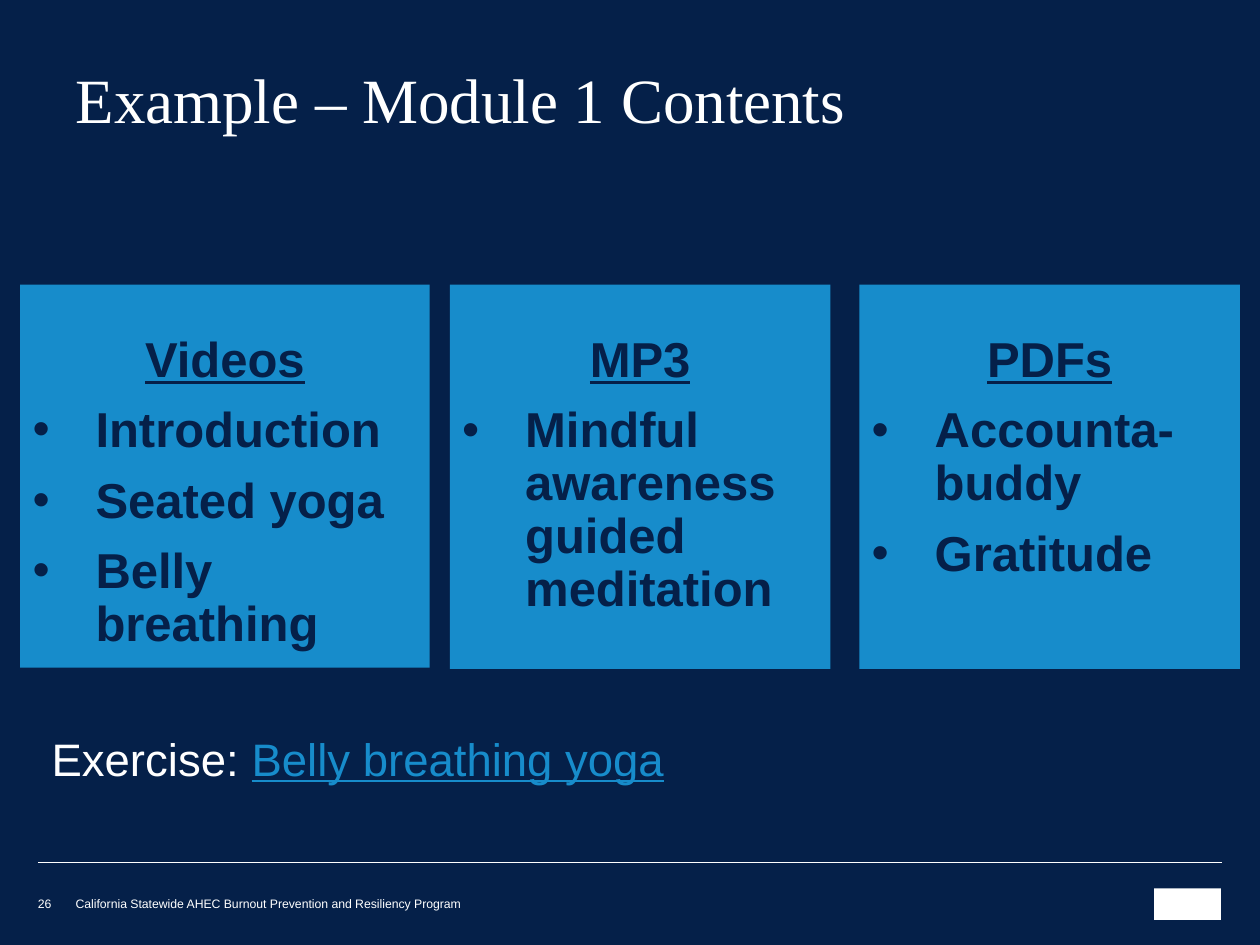
from dataclasses import dataclass

from lxml import etree
from pptx import Presentation
from pptx import util as u
from pptx.dml.color import RGBColor
from pptx.enum import shapes, text
from pptx.oxml import ns


@dataclass(frozen=True)
class Theme:
    navy: str = "052049"
    blue: str = "178CCB"
    white: str = "FFFFFF"
    serif: str = "Times New Roman"
    sans: str = "Arial"
    title: int = 36
    card: int = 28
    body: int = 26
    small: int = 7


class Deck:
    COLS, ROWS = 100, 75

    def __init__(self, theme):
        self.theme = theme
        self.prs = Presentation()
        self.prs.slide_width = u.Inches(10)
        self.prs.slide_height = u.Inches(7.5)
        self.slide = self.prs.slides.add_slide(self.prs.slide_layouts[5])
        self.paint(self.slide.background, theme.navy)

    def x(self, col):
        return round(self.prs.slide_width * col / self.COLS)

    def y(self, row):
        return round(self.prs.slide_height * row / self.ROWS)

    def box(self, left, top, wide, high):
        return self.x(left), self.y(top), self.x(wide), self.y(high)

    def paint(self, item, color):
        item.fill.solid()
        item.fill.fore_color.rgb = RGBColor.from_string(color)

    def style(self, font, size, color, name=None):
        font.name = name or self.theme.sans
        font.size = u.Pt(size)
        font.color.rgb = RGBColor.from_string(color)

    def title(self, words, *area):
        shape = self.slide.shapes.title
        shape.left, shape.top, shape.width, shape.height = self.box(*area)
        frame = shape.text_frame
        frame.text = words
        frame.word_wrap = True
        frame.auto_size = text.MSO_AUTO_SIZE.NONE
        frame.vertical_anchor = text.MSO_ANCHOR.BOTTOM
        para = frame.paragraphs[0]
        para.alignment = text.PP_ALIGN.LEFT
        para.line_spacing = 0.85
        self.style(para.runs[0].font, self.theme.title, self.theme.white, self.theme.serif)

    def rect(self, color, *area):
        shape = self.slide.shapes.add_shape(shapes.MSO_SHAPE.RECTANGLE, *self.box(*area))
        shape.shadow.inherit = False
        shape.line.fill.background()
        self.paint(shape, color)
        return shape

    def bullet(self, para):
        props = para._p.get_or_add_pPr()
        props.set("marL", str(u.Inches(0.5)))
        props.set("indent", str(u.Inches(-0.5)))
        etree.SubElement(props, ns.qn("a:buFont"), typeface=self.theme.sans)
        etree.SubElement(props, ns.qn("a:buChar"), char="•")

    def card(self, head, items, *area):
        frame = self.rect(self.theme.blue, *area).text_frame
        frame.word_wrap = True
        frame.vertical_anchor = text.MSO_ANCHOR.TOP
        frame.margin_top = self.y(4)
        frame.text = "\n".join([head, *items])
        for spot, para in enumerate(frame.paragraphs):
            para.alignment = text.PP_ALIGN.LEFT if spot else text.PP_ALIGN.CENTER
            para.line_spacing = 0.9
            para.space_after = u.Pt(10)
            if spot:
                self.bullet(para)
            font = para.runs[0].font
            self.style(font, self.theme.card, self.theme.navy)
            font.bold = True
            font.underline = spot == 0

    def label(self, parts, size, anchor, *area):
        frame = self.slide.shapes.add_textbox(*self.box(*area)).text_frame
        frame.word_wrap = True
        frame.vertical_anchor = anchor
        frame.margin_left = frame.margin_right = 0
        frame.margin_top = frame.margin_bottom = 0
        for words, color, under in parts:
            run = frame.paragraphs[0].add_run()
            run.text = words
            self.style(run.font, size, color)
            run.font.underline = under

    def rule(self, left, right, row):
        line = self.slide.shapes.add_connector(
            shapes.MSO_CONNECTOR.STRAIGHT, self.x(left), self.y(row), self.x(right), self.y(row))
        line.line.width = u.Pt(0.25)
        line.line.color.rgb = RGBColor.from_string(self.theme.white)
        etree.SubElement(line._element.spPr, ns.qn("a:effectLst"))


def main():
    look = Theme()
    deck = Deck(look)
    low, top = text.MSO_ANCHOR.BOTTOM, text.MSO_ANCHOR.TOP
    deck.rule(3, 97, 68.4)
    deck.rect(look.white, 91.6, 70.5, 5.3, 2.5)
    deck.label([("California Statewide AHEC Burnout Prevention and Resiliency Program", look.white, False)],
               look.small, low, 6, 70.8, 47.1, 1.5)
    deck.label([("26", look.white, False)], look.small, low, 3, 70.6, 2.7, 1.7)
    deck.title("Example – Module 1 Contents", 5, 4.6, 89.4, 6.7)
    cards = [
        ("Videos", ["Introduction", "Seated yoga", "Belly breathing"], 1.6, 32.5, 30.4),
        ("MP3", ["Mindful awareness guided meditation"], 35.7, 30.2, 30.5),
        ("PDFs", ["Accounta-buddy", "Gratitude"], 68.2, 30.2, 30.5),
    ]
    for head, items, left, wide, high in cards:
        deck.card(head, items, left, 22.6, wide, high)
    deck.label([("Exercise: ", look.white, False), ("Belly breathing yoga", look.blue, True)],
               look.body, top, 4.1, 58, 74, 4.4)
    deck.prs.save("out.pptx")


if __name__ == "__main__":
    main()
